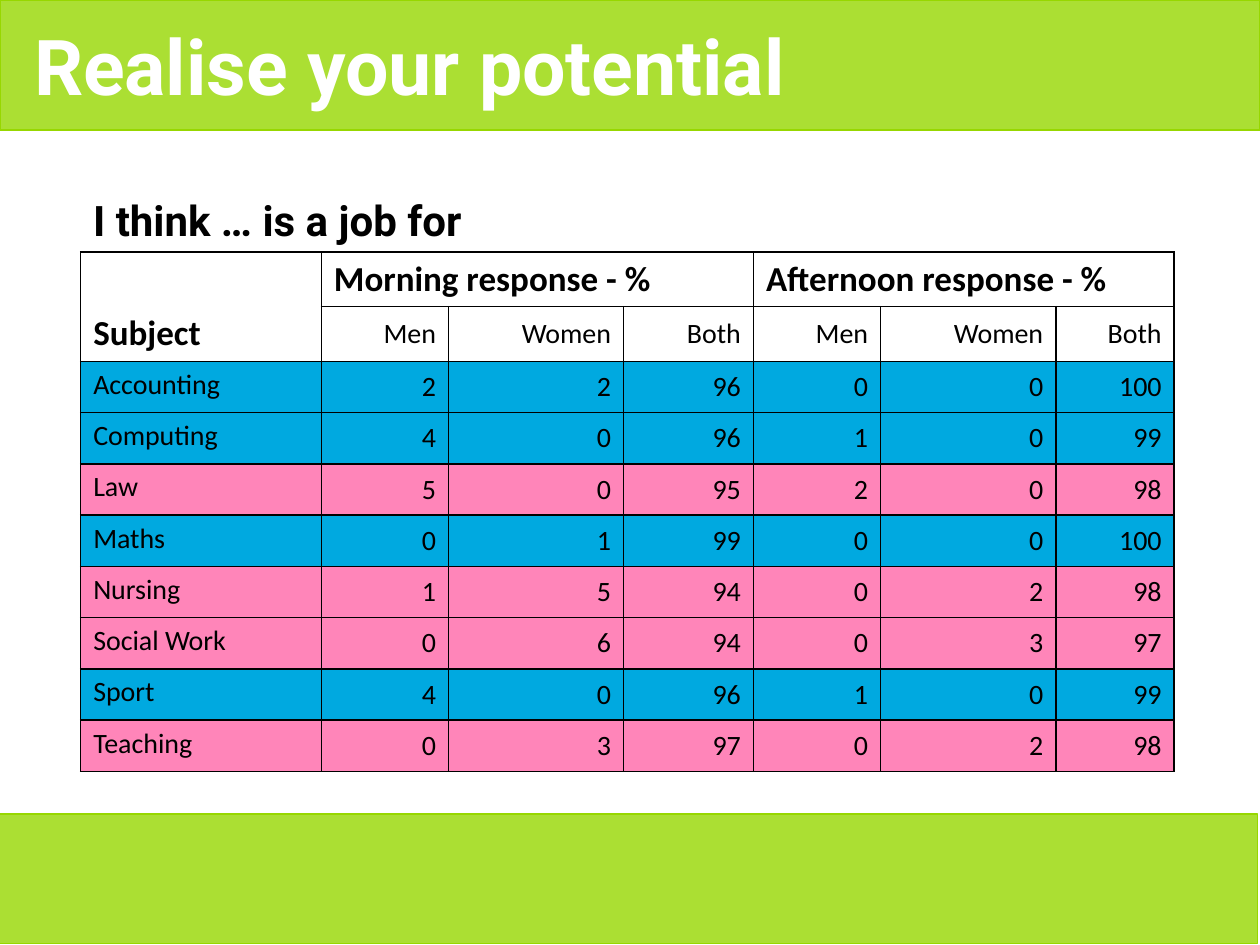
from dataclasses import dataclass

import pptx
import pptx.dml.color
import pptx.enum.shapes
import pptx.enum.text
import pptx.oxml
import pptx.oxml.ns
import pptx.util
from pptx.util import Inches

GREEN, BLUE, PINK = "97D700", "00A9E0", "FF85B9"
BLACK, WHITE = "000000", "FFFFFF"
ALIGN = pptx.enum.text.PP_ALIGN
ANCHOR = pptx.enum.text.MSO_ANCHOR
COLUMN_WIDTHS = (1.91, 1.01, 1.39, 1.03, 1.01, 1.39, 0.94)
GROUPS = ("Morning response - %", "Afternoon response - %")
ANSWERS = ("Men", "Women", "Both")


@dataclass
class Subject:
    name: str
    colour: str
    percentages: tuple[int, ...]


SUBJECTS = (
    Subject("Accounting", BLUE, (2, 2, 96, 0, 0, 100)),
    Subject("Computing", BLUE, (4, 0, 96, 1, 0, 99)),
    Subject("Law", PINK, (5, 0, 95, 2, 0, 98)),
    Subject("Maths", BLUE, (0, 1, 99, 0, 0, 100)),
    Subject("Nursing", PINK, (1, 5, 94, 0, 2, 98)),
    Subject("Social Work", PINK, (0, 6, 94, 0, 3, 97)),
    Subject("Sport", BLUE, (4, 0, 96, 1, 0, 99)),
    Subject("Teaching", PINK, (0, 3, 97, 0, 2, 98)),
)


def rgb(colour: str) -> pptx.dml.color.RGBColor:
    return pptx.dml.color.RGBColor.from_string(colour)


def set_font(paragraph, name: str, size: int, colour: str, bold: bool) -> None:
    font = paragraph.font
    font.name, font.size, font.bold = name, pptx.util.Pt(size), bold
    font.color.rgb = rgb(colour)


def place(shape, left: float, top: float, width: float, height: float) -> None:
    shape.left, shape.top = Inches(left), Inches(top)
    shape.width, shape.height = Inches(width), Inches(height)


def paint_band(shape) -> None:
    """Give a shape the translucent green fill and green outline."""
    shape.fill.solid()
    shape.fill.fore_color.rgb = rgb(GREEN)
    colour = shape.fill._xPr.find(".//" + pptx.oxml.ns.qn("a:srgbClr"))
    colour.append(pptx.oxml.parse_xml(
        f'<a:alpha {pptx.oxml.ns.nsdecls("a")} val="80000"/>'))
    shape.line.color.rgb = rgb(GREEN)
    shape.line.width = pptx.util.Pt(1)


def add_title(page) -> None:
    title = page.shapes.title
    place(title, 0, 0, 10, 1.03)
    paint_band(title)
    frame = title.text_frame
    frame.text = "Realise your potential"
    frame.auto_size = pptx.enum.text.MSO_AUTO_SIZE.NONE
    frame.vertical_anchor = ANCHOR.MIDDLE
    frame.margin_left = frame.margin_right = Inches(0.07)
    frame.margin_top = frame.margin_bottom = Inches(0.04)
    paragraph = frame.paragraphs[0]
    paragraph.alignment = ALIGN.LEFT
    properties = paragraph._p.get_or_add_pPr()
    properties.set("marL", str(Inches(0.2)))
    properties.set("indent", "0")
    set_font(paragraph, "Roboto", 44, WHITE, True)


def add_footer_band(page) -> None:
    band = page.shapes.add_shape(
        pptx.enum.shapes.MSO_SHAPE.RECTANGLE,
        Inches(-0.02), Inches(6.46), Inches(10), Inches(1.03))
    band.shadow.inherit = False
    paint_band(band)


def add_table_heading(page) -> None:
    box = page.shapes.add_textbox(
        Inches(0.64), Inches(1.39), Inches(8.68), Inches(0.61))
    frame = box.text_frame
    frame.word_wrap = True
    frame.vertical_anchor = ANCHOR.BOTTOM
    frame.text = "I think … is a job for"
    paragraph = frame.paragraphs[0]
    paragraph.line_spacing = 0.9
    set_font(paragraph, "Roboto", 24, BLACK, True)


def add_borders(cell) -> None:
    properties = cell._tc.get_or_add_tcPr()
    for side in "LRTB":
        properties.append(pptx.oxml.parse_xml(
            f'<a:ln{side} {pptx.oxml.ns.nsdecls("a")} w="12700"><a:solidFill>'
            f'<a:srgbClr val="{BLACK}"/></a:solidFill></a:ln{side}>'))


def write_cell(cell, text: str, size: int = 16, bold: bool = False,
               alignment=ALIGN.LEFT, anchor=ANCHOR.TOP) -> None:
    cell.text = text
    cell.vertical_anchor = anchor
    paragraph = cell.text_frame.paragraphs[0]
    paragraph.alignment = alignment
    set_font(paragraph, "Calibri", size, BLACK, bold)


def write_right(cell, text: str) -> None:
    write_cell(cell, text, alignment=ALIGN.RIGHT, anchor=ANCHOR.MIDDLE)


def add_response_table(page) -> None:
    table = page.shapes.add_table(
        len(SUBJECTS) + 2, len(COLUMN_WIDTHS),
        Inches(0.64), Inches(2), Inches(8.68), Inches(4.07)).table
    table.first_row = table.horz_banding = False
    for column, width in zip(table.columns, COLUMN_WIDTHS):
        column.width = Inches(width)
    for cell in table.iter_cells():
        add_borders(cell)
        cell.fill.background()

    table.cell(0, 0).merge(table.cell(1, 0))
    write_cell(table.cell(0, 0), "Subject", 20, True, anchor=ANCHOR.BOTTOM)
    for index, group in enumerate(GROUPS):
        first = 1 + index * len(ANSWERS)
        table.cell(0, first).merge(table.cell(0, first + len(ANSWERS) - 1))
        write_cell(table.cell(0, first), group, 20, True)
        for offset, answer in enumerate(ANSWERS):
            write_right(table.cell(1, first + offset), answer)

    for row, subject in enumerate(SUBJECTS, start=2):
        write_cell(table.cell(row, 0), subject.name)
        for column, percentage in enumerate(subject.percentages, start=1):
            write_right(table.cell(row, column), str(percentage))
        for cell in table.rows[row].cells:
            cell.fill.solid()
            cell.fill.fore_color.rgb = rgb(subject.colour)


def main() -> None:
    deck = pptx.Presentation()
    deck.slide_width, deck.slide_height = Inches(10), Inches(7.5)
    page = deck.slides.add_slide(deck.slide_layouts.get_by_name("Title Only"))
    add_title(page)
    add_footer_band(page)
    add_table_heading(page)
    add_response_table(page)
    deck.save("out.pptx")


if __name__ == "__main__":
    main()
